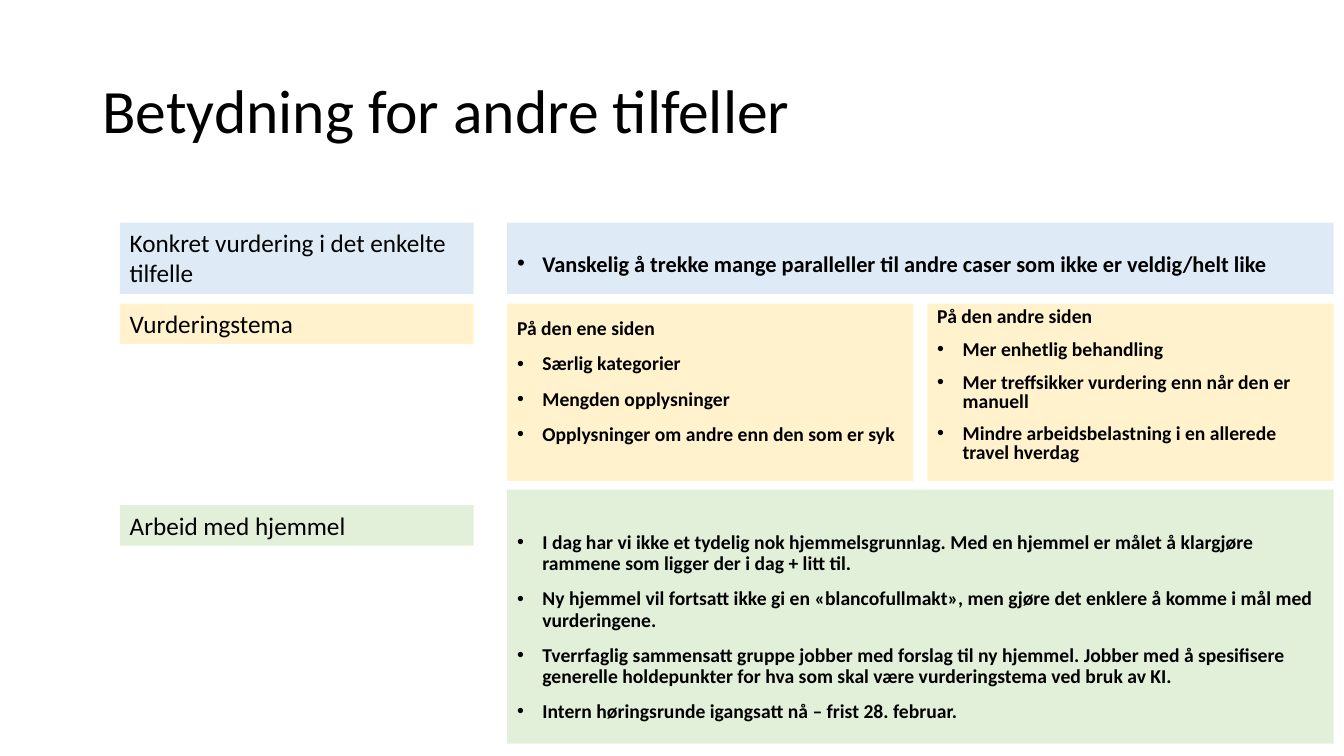
from lxml.etree import SubElement
from pptx import Presentation
from pptx.dml.color import RGBColor
from pptx.enum.shapes import MSO_SHAPE
from pptx.enum.text import MSO_ANCHOR, MSO_AUTO_SIZE, PP_ALIGN
from pptx.oxml.ns import qn
from pptx.util import Cm, Pt

COLORS = {"text": "000000", "blue": "DEEBF7", "yellow": "FFF2CC", "green": "E2F0D9"}
FONT = "Calibri"

LABEL_LEFT, LABEL_WIDTH, LABEL_HEIGHT = 3.02, 8.92, 1.02
BODY_LEFT, BODY_WIDTH = 12.78, 20.83
HALF_WIDTH = 10.24
RIGHT_LEFT = BODY_LEFT + BODY_WIDTH - HALF_WIDTH
CONCRETE_TOP, CONCRETE_HEIGHT = 5.61, 1.8
THEME_TOP, THEME_HEIGHT = 7.65, 4.47
BASIS_TOP, BASIS_HEIGHT = 12.34, 6.4
BASIS_LABEL_TOP = 12.73

ONE_SIDE = ["Særlig kategorier", "Mengden opplysninger",
            "Opplysninger om andre enn den som er syk"]
OTHER_SIDE = ["Mer enhetlig behandling",
              "Mer treffsikker vurdering enn når den er manuell",
              "Mindre arbeidsbelastning i en allerede travel hverdag"]
BASIS = [
    "I dag har vi ikke et tydelig nok hjemmelsgrunnlag. Med en hjemmel er målet å "
    "klargjøre rammene som ligger der i dag + litt til.",
    "Ny hjemmel vil fortsatt ikke gi en «blancofullmakt», men gjøre det enklere å "
    "komme i mål med vurderingene.",
    "Tverrfaglig sammensatt gruppe jobber med forslag til ny hjemmel. Jobber med å "
    "spesifisere generelle holdepunkter for hva som skal være vurderingstema ved bruk av KI.",
    "Intern høringsrunde igangsatt nå – frist 28. februar.",
]


def add_bullet(para):
    properties = para._p.get_or_add_pPr()
    properties.set("marL", str(Cm(0.64)))
    properties.set("indent", str(-Cm(0.64)))
    SubElement(properties, qn("a:buFont"), typeface="Arial")
    SubElement(properties, qn("a:buChar"), char="•")


def write(para, text, size=14, bold=False, bullet=False, spacing=1.0, before=0):
    para.alignment = PP_ALIGN.LEFT
    para.line_spacing = spacing
    para.space_before = Pt(before)
    if bullet:
        add_bullet(para)
    span = para.add_run()
    span.text = text
    span.font.name = FONT
    span.font.size = Pt(size)
    span.font.bold = bold
    span.font.color.rgb = RGBColor.from_string(COLORS["text"])


def add_box(slide, left, top, width, height, color, anchor=MSO_ANCHOR.TOP):
    box = slide.shapes.add_shape(MSO_SHAPE.RECTANGLE, Cm(left), Cm(top), Cm(width), Cm(height))
    box.shadow.inherit = False
    box.fill.solid()
    box.fill.fore_color.rgb = RGBColor.from_string(COLORS[color])
    box.line.fill.background()
    box.text_frame.word_wrap = True
    box.text_frame.vertical_anchor = anchor
    return box


def add_label(slide, text, top, color, height=LABEL_HEIGHT):
    box = add_box(slide, LABEL_LEFT, top, LABEL_WIDTH, height, color)
    box.text_frame.auto_size = MSO_AUTO_SIZE.SHAPE_TO_FIT_TEXT
    write(box.text_frame.paragraphs[0], text, size=18)


def add_points(box, points, heading=None, size=14, spacing=0.9):
    """Fill a box with bold bullets, under a heading without a bullet if given."""
    lines = ([(heading, False)] if heading else []) + [(point, True) for point in points]
    frame = box.text_frame
    for index, (text, bullet) in enumerate(lines):
        para = frame.add_paragraph() if index else frame.paragraphs[0]
        write(para, text, size=size, bold=True, bullet=bullet, spacing=spacing, before=10)


def add_title(slide, text):
    title = slide.shapes.title
    title.left, title.top, title.width, title.height = Cm(2.33), Cm(1.01), Cm(29.21), Cm(3.68)
    title.text_frame.vertical_anchor = MSO_ANCHOR.MIDDLE
    write(title.text_frame.paragraphs[0], text, size=44, spacing=0.9)


def main():
    deck = Presentation()
    deck.slide_width, deck.slide_height = Cm(33.87), Cm(19.05)
    slide = deck.slides.add_slide(deck.slide_layouts[5])
    add_title(slide, "Betydning for andre tilfeller")

    add_label(slide, "Konkret vurdering i det enkelte tilfelle", CONCRETE_TOP, "blue",
              height=CONCRETE_HEIGHT)
    add_label(slide, "Vurderingstema", THEME_TOP, "yellow")
    add_label(slide, "Arbeid med hjemmel", BASIS_LABEL_TOP, "green")

    concrete = add_box(slide, BODY_LEFT, CONCRETE_TOP, BODY_WIDTH, CONCRETE_HEIGHT, "blue",
                       anchor=MSO_ANCHOR.MIDDLE)
    concrete.text_frame.margin_top = Cm(0.51)
    add_points(concrete, ["Vanskelig å trekke mange paralleller til andre caser som ikke er "
                          "veldig/helt like"], size=16, spacing=0.8)

    one_side = add_box(slide, BODY_LEFT, THEME_TOP, HALF_WIDTH, THEME_HEIGHT, "yellow",
                       anchor=MSO_ANCHOR.MIDDLE)
    one_side.text_frame.margin_bottom = Cm(0.63)
    add_points(one_side, ONE_SIDE, heading="På den ene siden")

    other_side = add_box(slide, RIGHT_LEFT, THEME_TOP, HALF_WIDTH, THEME_HEIGHT, "yellow")
    add_points(other_side, OTHER_SIDE, heading="På den andre siden", spacing=0.8)

    basis = add_box(slide, BODY_LEFT, BASIS_TOP, BODY_WIDTH, BASIS_HEIGHT, "green")
    basis.text_frame.margin_top = Cm(1.08)
    add_points(basis, BASIS)

    deck.save("out.pptx")


if __name__ == "__main__":
    main()
